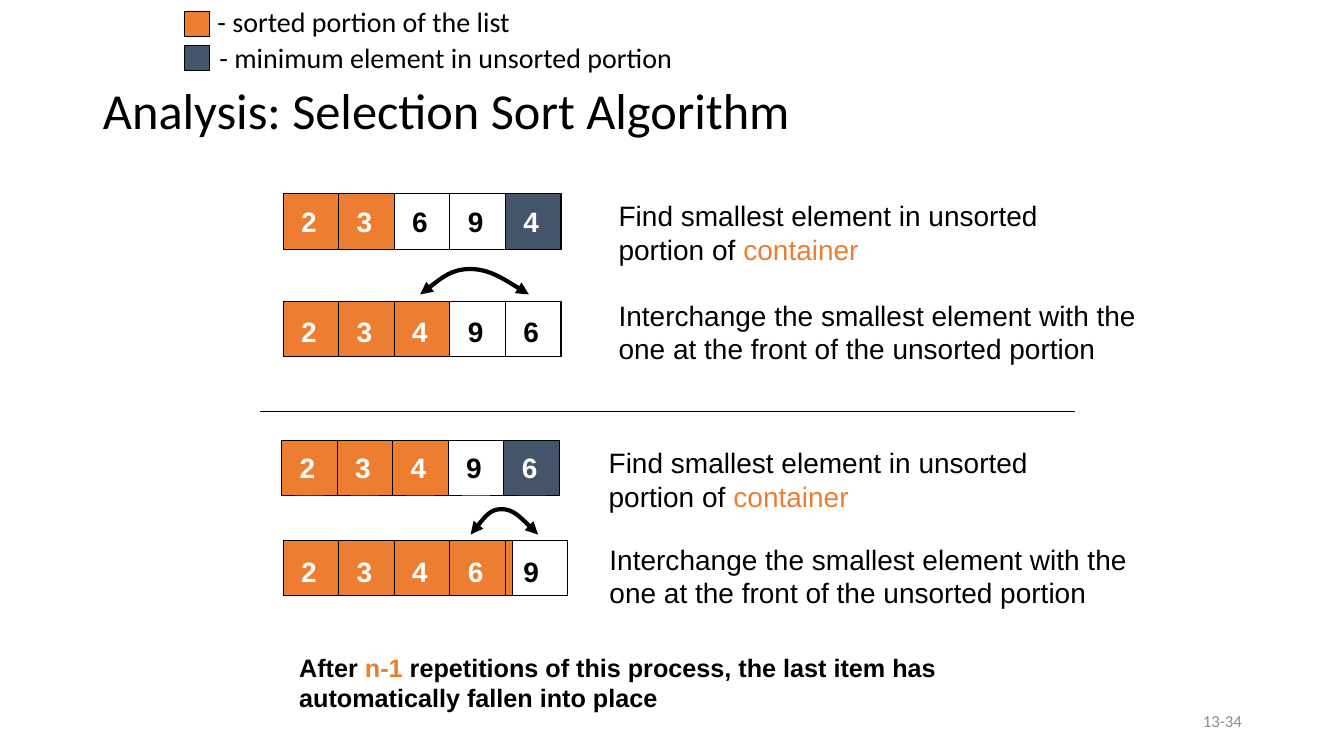
from lxml import etree
from pptx import Presentation
from pptx.dml.color import RGBColor
from pptx.enum import shapes, text
from pptx.oxml import ns
from pptx.util import Cm, Pt

BLACK, WHITE, ORANGE, NAVY, GREY = "000000", "FFFFFF", "ED7D31", "44546A", "8C8C8C"

heading = "Analysis: Selection Sort Algorithm"
legend = [
    (ORANGE, 0.28, "- sorted portion of the list", (5.23, 0, 7.95, 1.12)),
    (NAVY, 1.14, "- minimum element in unsorted portion", (5.28, 0.89, 12.04, 1.12)),
]
find_smallest = [("Find smallest element in unsorted portion of ", BLACK), ("container", ORANGE)]
interchange = [("Interchange the smallest element with the one at the front of the unsorted portion", BLACK)]
steps = [
    {"items": "23694", "sorted": 2, "minimum": 4, "at": (7.14, 4.88), "width": 1.4, "digit_top": 5.03,
     "remark": find_smallest, "remark_at": (15.34, 4.88, 11.99, 1.96)},
    {"items": "23496", "sorted": 3, "minimum": None, "at": (7.14, 7.59), "width": 1.4, "digit_top": 7.8,
     "remark": interchange, "remark_at": (15.34, 7.39, 13.67, 1.96)},
    {"items": "23496", "sorted": 3, "minimum": 4, "at": (7.1, 11.1), "width": 1.4, "digit_top": 11.23,
     "remark": find_smallest, "remark_at": (15.09, 11.1, 11.99, 1.96)},
    {"items": "23469", "sorted": 4, "minimum": None, "at": (7.14, 13.61), "width": 1.57, "digit_top": 13.84,
     "remark": interchange, "remark_at": (15.11, 13.54, 14.1, 1.96)},
]
swaps = [(10.59, 6.78, 2.74, 0.64), (11.86, 12.83, 1.7, 0.64)]
swap_curve = [(0, 1), (0.15, 0.5), (0.29, 0), (0.46, 0), (0.63, 0), (0.81, 0.5), (1, 1)]
conclusion = [
    ("After ", BLACK),
    ("n-1", ORANGE),
    (" repetitions of this process, the last item has automatically fallen into place", BLACK),
]
page_number = "13-34"
CELL = 1.4
DIGIT_INSET = 0.2


def rgb(value):
    return RGBColor.from_string(value)


def style(run, size, color, font, bold=False):
    run.font.size, run.font.name, run.font.bold = Pt(size), font, bold
    run.font.color.rgb = rgb(color)


def outline(shape, width):
    shape.line.color.rgb = rgb(BLACK)
    shape.line.width = Pt(width)


def add_rect(slide, at, color):
    rect = slide.shapes.add_shape(shapes.MSO_SHAPE.RECTANGLE, *map(Cm, at))
    rect.shadow.inherit = False
    if color:
        rect.fill.solid()
        rect.fill.fore_color.rgb = rgb(color)
    else:
        rect.fill.background()
    outline(rect, 0.75)


def add_label(slide, at, parts, size=20, font="Arial", bold=False, wrap=True):
    frame = slide.shapes.add_textbox(*map(Cm, at)).text_frame
    frame.word_wrap = wrap
    frame.auto_size = text.MSO_AUTO_SIZE.SHAPE_TO_FIT_TEXT
    for words, color in parts:
        run = frame.paragraphs[0].add_run()
        run.text = words
        style(run, size, color, font, bold)
    return frame


def add_step(slide, step):
    left, top = step["at"]
    for i in range(len(step["items"])):
        color = ORANGE if i < step["sorted"] else NAVY if i == step["minimum"] else None
        add_rect(slide, (left + i * CELL, top, step["width"], CELL), color)
    for i, item in enumerate(step["items"]):
        color = WHITE if i < step["sorted"] or i == step["minimum"] else BLACK
        at = (left + i * CELL + DIGIT_INSET, step["digit_top"], step["width"] - 0.6, 1.09)
        add_label(slide, at, [(item, color)], bold=True)
    add_label(slide, step["remark_at"], step["remark"])


def add_swap(slide, at):
    left, top, width, height = at
    points = [(Cm(left + x * width), Cm(top + y * height)) for x, y in swap_curve]
    builder = slide.shapes.build_freeform(*points[0])
    builder.add_line_segments(points[1:], close=False)
    arc = builder.convert_to_shape()
    arc.shadow.inherit = False
    arc.fill.background()
    outline(arc, 3)
    segments = list(arc._element.iter(ns.qn("a:lnTo")))
    outline_path = segments[0].getparent()
    for start in range(0, len(segments), 3):
        curve = etree.SubElement(outline_path, ns.qn("a:cubicBezTo"))
        for segment in segments[start:start + 3]:
            curve.append(segment[0])
            outline_path.remove(segment)
    line = arc._element.spPr.find(ns.qn("a:ln"))
    for end in ("a:headEnd", "a:tailEnd"):
        etree.SubElement(line, ns.qn(end), type="triangle")


def add_divider(slide):
    divider = slide.shapes.add_connector(
        shapes.MSO_CONNECTOR.STRAIGHT, Cm(6.55), Cm(10.36), Cm(27.1), Cm(10.36))
    outline(divider, 0.75)
    etree.SubElement(divider._element.spPr, ns.qn("a:effectLst"))


def add_heading(slide):
    title = slide.shapes.title
    title.left, title.top, title.width, title.height = map(Cm, (2.34, 1.02, 29.21, 3.68))
    title.text_frame.text = heading
    title.text_frame.vertical_anchor = text.MSO_ANCHOR.MIDDLE
    paragraph = title.text_frame.paragraphs[0]
    paragraph.alignment = text.PP_ALIGN.LEFT
    paragraph.line_spacing = 0.9
    style(paragraph.runs[0], 36, BLACK, "Calibri")


def main():
    deck = Presentation()
    deck.slide_width, deck.slide_height = Cm(33.87), Cm(19.05)
    slide = deck.slides.add_slide(deck.slide_layouts[5])
    add_heading(slide)
    for step in steps:
        add_step(slide, step)
    for at in swaps:
        add_swap(slide, at)
    add_divider(slide)
    add_label(slide, (7.29, 16.31, 19.81, 1.8), conclusion, size=18, bold=True)
    for color, top, meaning, at in legend:
        add_rect(slide, (4.65, top, 0.64, 0.64), color)
        add_label(slide, at, [(meaning, BLACK)], font="Calibri", wrap=False)
    number = add_label(slide, (23.93, 17.65, 7.62, 1.02), [(page_number, GREY)], size=12, font="Calibri")
    number.auto_size = text.MSO_AUTO_SIZE.NONE
    number.vertical_anchor = text.MSO_ANCHOR.MIDDLE
    number.paragraphs[0].alignment = text.PP_ALIGN.RIGHT
    deck.save("out.pptx")


if __name__ == "__main__":
    main()
